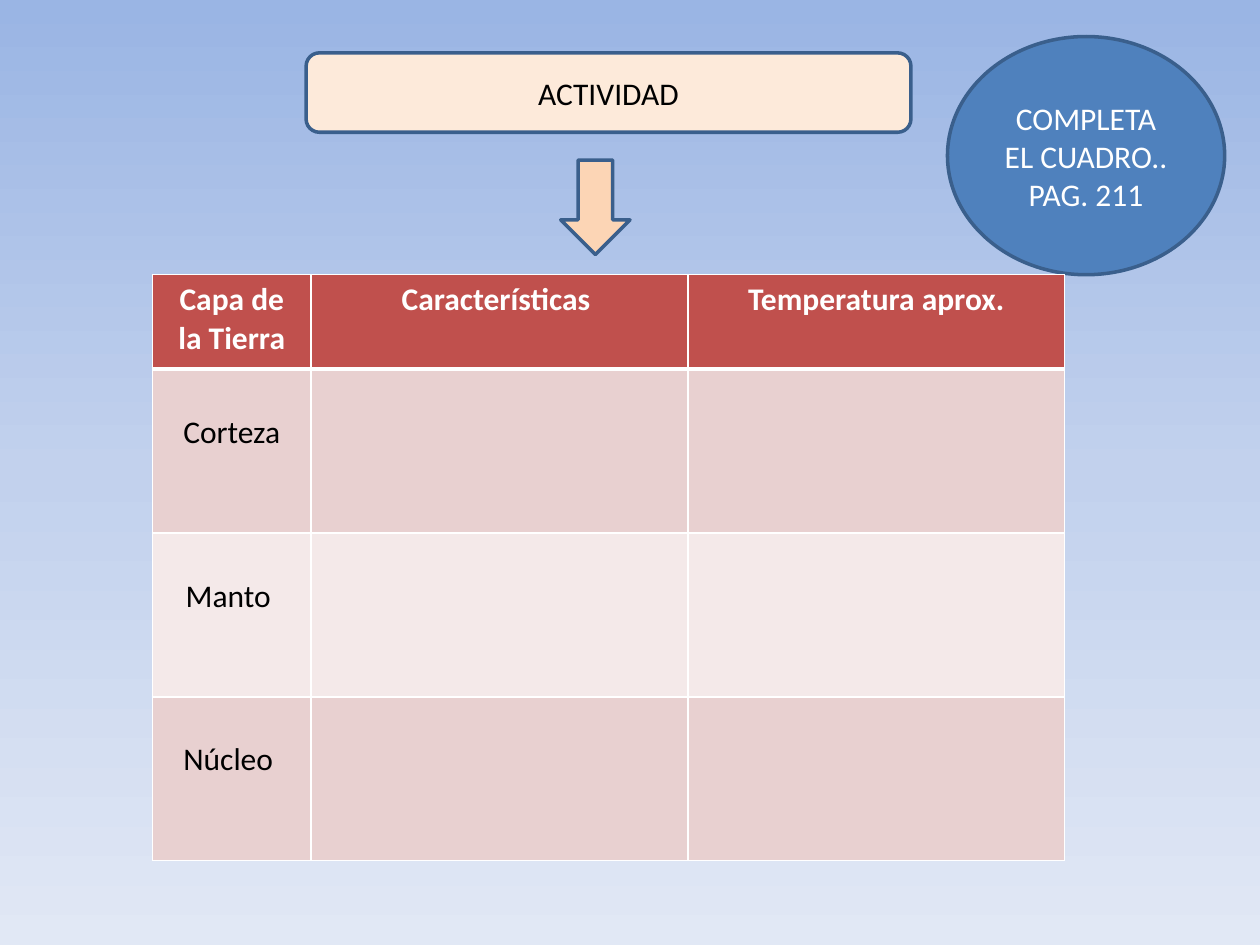
from lxml.etree import SubElement
from pptx import Presentation
from pptx.dml.color import RGBColor
from pptx.enum.shapes import MSO_SHAPE as Shape
from pptx.enum.text import MSO_ANCHOR as Anchor, PP_ALIGN as Align
from pptx.oxml.ns import qn
from pptx.util import Inches, Pt

BLACK = RGBColor(0x00, 0x00, 0x00)
WHITE = RGBColor(0xFF, 0xFF, 0xFF)
CREAM = RGBColor(0xFD, 0xEA, 0xDA)
PEACH = RGBColor(0xFC, 0xD5, 0xB5)
BLUE = RGBColor(0x4F, 0x81, 0xBD)
OUTLINE = RGBColor(0x3A, 0x5F, 0x8C)
RED = RGBColor(0xC0, 0x50, 0x4D)
BANDS = [RGBColor(0xE8, 0xD0, 0xD0), RGBColor(0xF4, 0xE9, 0xE9)]
SKY = [(0, RGBColor(0x9A, 0xB5, 0xE4)),
       (50, RGBColor(0xC2, 0xD1, 0xED)),
       (100, RGBColor(0xE1, 0xE8, 0xF5))]

FIGURES = [
    (Shape.ROUNDED_RECTANGLE, (2.43, 0.42, 4.8, 0.63), CREAM, ["ACTIVIDAD"], BLACK),
    (Shape.DOWN_ARROW, (4.45, 1.27, 0.55, 0.75), PEACH, [], BLACK),
    (Shape.OVAL, (7.52, 0.29, 2.2, 1.89), BLUE,
     ["COMPLETA EL CUADRO..", "PAG. 211"], WHITE),
]
HEADERS = ["Capa de la Tierra", "Características ", "Temperatura aprox."]
LAYERS = ["Corteza", "Manto ", "Núcleo "]
TABLE_LEFT, TABLE_TOP = 1.21, 2.18
COLUMN_WIDTHS = [1.26, 2.99, 2.99]
HEADER_HEIGHT, LAYER_HEIGHT = 0.75, 1.3
LAYER_TEXT_MARGIN = 0.35


def write(frame, paragraphs, color=BLACK, bold=False, size=18):
    frame.word_wrap = True
    for i, text in enumerate(paragraphs):
        paragraph = frame.add_paragraph() if i else frame.paragraphs[0]
        paragraph.alignment = Align.CENTER
        run = paragraph.add_run()
        run.text = text
        run.font.name = "Calibri"
        run.font.size = Pt(size)
        run.font.bold = bold
        run.font.color.rgb = color


def paint_background(slide):
    fill = slide.background.fill
    fill.gradient()
    fill.gradient_angle = 270
    stops = slide.element.find(".//" + qn("a:gsLst"))
    for stop in list(stops):
        stops.remove(stop)
    for percent, color in SKY:
        stop = SubElement(stops, qn("a:gs"), pos=str(percent * 1000))
        SubElement(stop, qn("a:srgbClr"), val=str(color))


def add_figure(slide, kind, box, fill, paragraphs, color):
    figure = slide.shapes.add_shape(kind, *map(Inches, box))
    figure.shadow.inherit = False
    figure.fill.solid()
    figure.fill.fore_color.rgb = fill
    figure.line.color.rgb = OUTLINE
    figure.line.width = Pt(2)
    figure.text_frame.vertical_anchor = Anchor.MIDDLE
    write(figure.text_frame, paragraphs, color=color)


def set_borders(cell, top=1, bottom=1):
    properties = cell._tc.get_or_add_tcPr()
    widths = {"a:lnL": 1, "a:lnR": 1, "a:lnT": top, "a:lnB": bottom}
    for position, (side, width) in enumerate(widths.items()):
        border = SubElement(properties, qn(side), w=str(Pt(width)))
        SubElement(SubElement(border, qn("a:solidFill")), qn("a:srgbClr"), val=str(WHITE))
        properties.insert(position, border)  # borders come before the fill


def add_layer_table(slide):
    rows = [HEADERS] + [[layer, "", ""] for layer in LAYERS]
    heights = [HEADER_HEIGHT] + [LAYER_HEIGHT] * len(LAYERS)
    box = (TABLE_LEFT, TABLE_TOP, sum(COLUMN_WIDTHS), sum(heights))
    table = slide.shapes.add_table(len(rows), len(HEADERS), *map(Inches, box)).table
    for column, width in zip(table.columns, COLUMN_WIDTHS):
        column.width = Inches(width)
    for r, (texts, height) in enumerate(zip(rows, heights)):
        table.rows[r].height = Inches(height)
        is_header = r == 0
        for c, text in enumerate(texts):
            cell = table.cell(r, c)
            cell.fill.solid()
            cell.fill.fore_color.rgb = RED if is_header else BANDS[(r - 1) % 2]
            set_borders(cell, top=3 if r == 1 else 1, bottom=3 if is_header else 1)
            if not is_header:
                cell.margin_top = Inches(LAYER_TEXT_MARGIN)
            if text:
                write(cell.text_frame, [text], color=WHITE if is_header else BLACK,
                      bold=is_header)


def main():
    deck = Presentation()
    deck.slide_width, deck.slide_height = Inches(10), Inches(7.5)
    slide = deck.slides.add_slide(deck.slide_layouts[6])
    paint_background(slide)
    for figure in FIGURES:
        add_figure(slide, *figure)
    add_layer_table(slide)
    deck.save("out.pptx")


if __name__ == "__main__":
    main()
